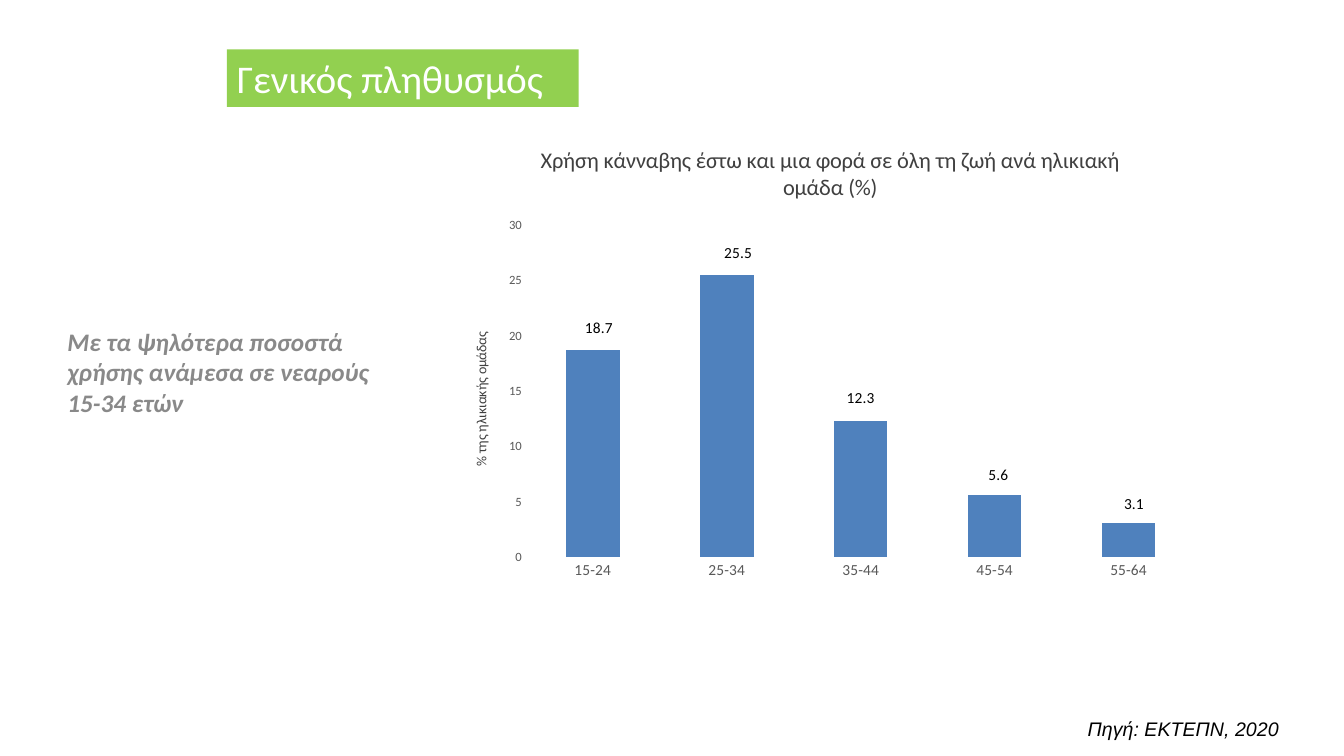
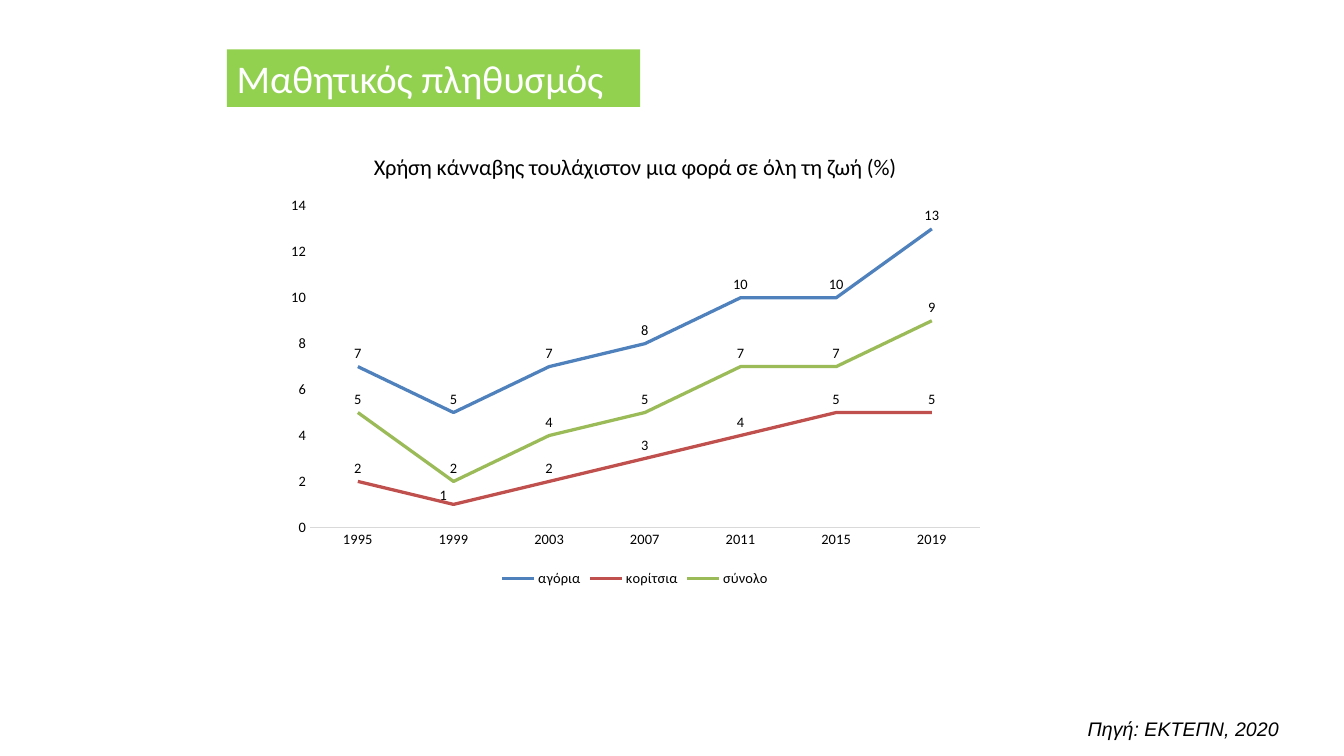
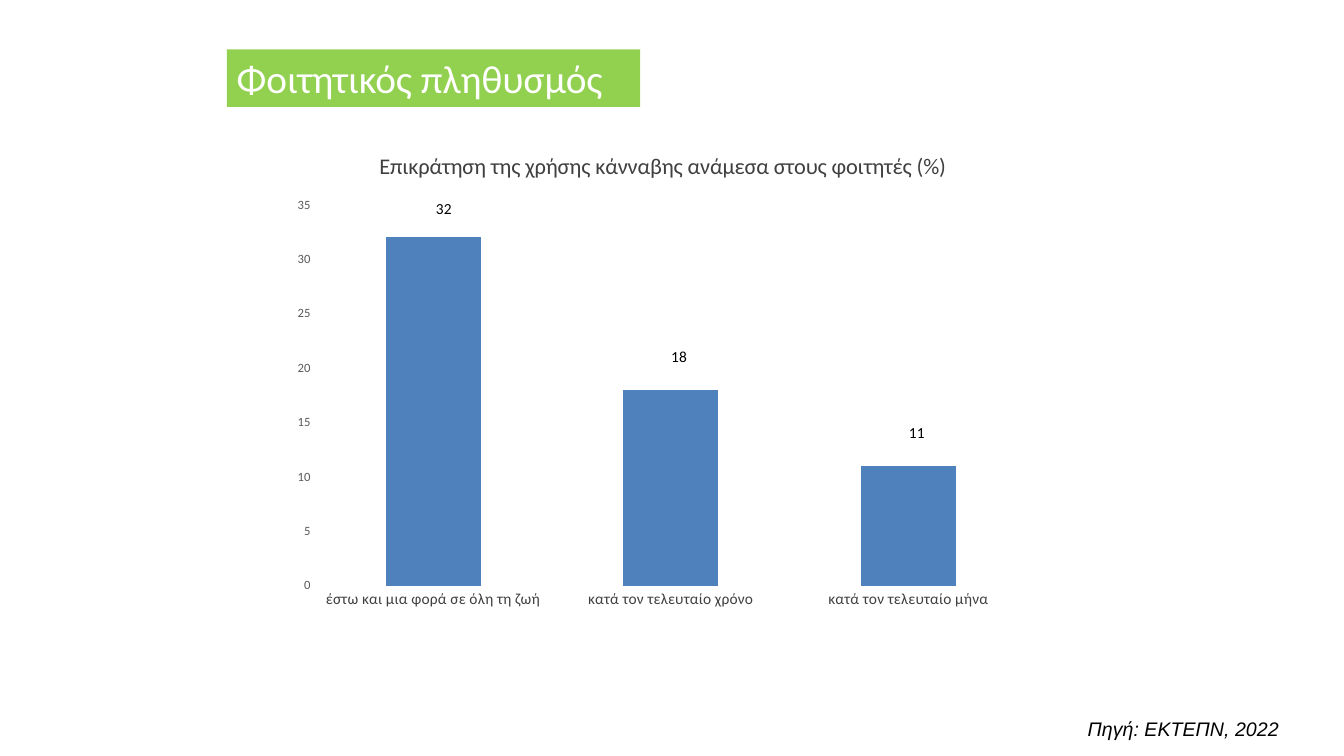
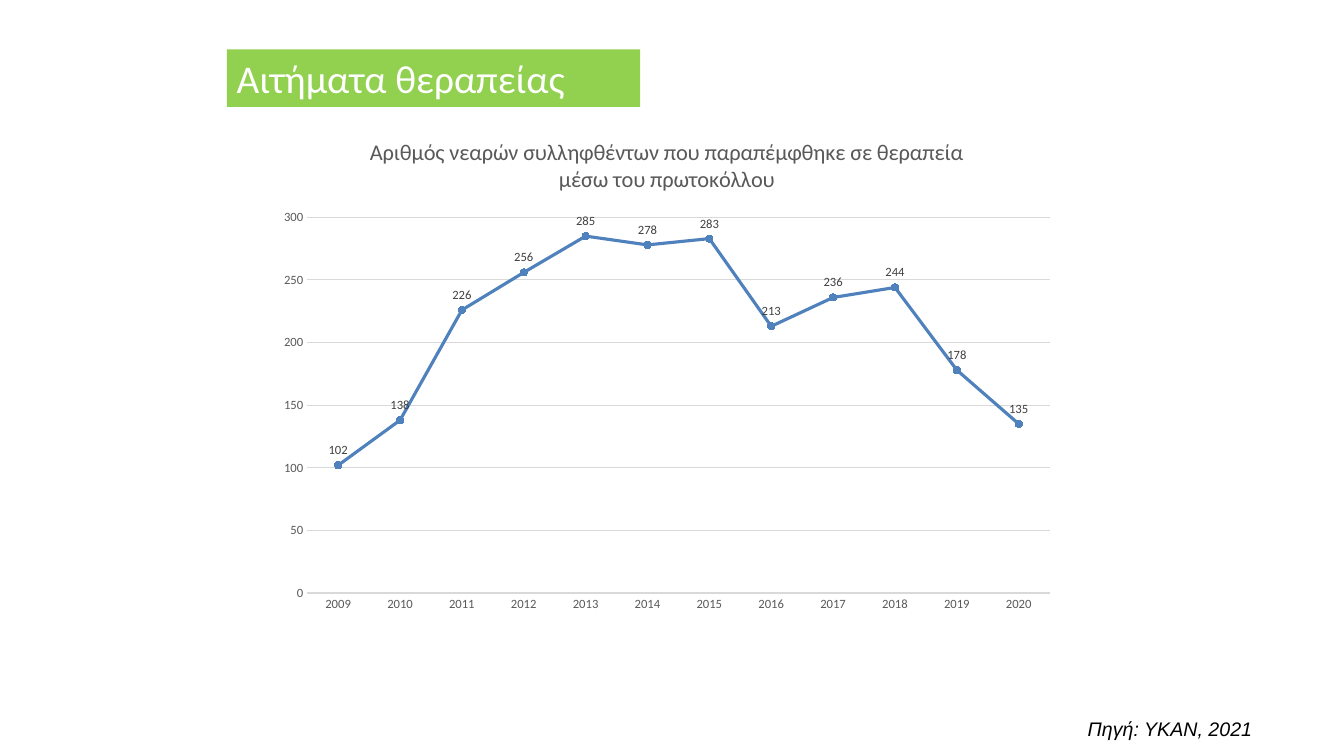
from lxml import etree
from pptx import Presentation
from pptx import util as u
from pptx.chart import data as cd
from pptx.dml import color
from pptx.enum import chart as ch, shapes, text
from pptx.oxml import ns

GREEN, WHITE, BLACK = "92D050", "FFFFFF", "000000"
BLUE, RED, LIME = "4F81BD", "C0504D", "9BBB59"
DARK, MID, GREY, PALE = "404040", "595959", "898989", "D9D9D9"
BAR, LINE, DOTS = (ch.XL_CHART_TYPE.COLUMN_CLUSTERED, ch.XL_CHART_TYPE.LINE,
                   ch.XL_CHART_TYPE.LINE_MARKERS)
OUT, UP = ch.XL_LABEL_POSITION.OUTSIDE_END, ch.XL_LABEL_POSITION.ABOVE

SLIDES = [
    dict(head="Γενικός πληθυσμός", wide=3.49, source="Πηγή: ΕΚΤΕΠΝ, 2020",
         note="Με τα ψηλότερα ποσοστά χρήσης ανάμεσα σε νεαρούς 15-34 ετών",
         kind=BAR, box=(4.46, 1.25, 7.55, 4.59), plot=(10, 21.5, 88, 71.7),
         title="Χρήση κάνναβης έστω και μια φορά σε όλη τη ζωή ανά ηλικιακή ομάδα (%)",
         tint=DARK, unit="% της ηλικιακής ομάδας", top=30, step=5,
         cats=["15-24", "25-34", "35-44", "45-54", "55-64"],
         rows=[("Series 1", BLUE, [18.7, 25.5, 12.3, 5.6, 3.1])],
         size=10, cat=(11, MID), val=(9, MID), label=(11, BLACK), place=OUT,
         shift={(0, 0): (.8, -1.9), (0, 1): (1.5, -1.8), (0, 2): (0, -2.1),
                (0, 3): (.5, -1.4), (0, 4): (.7, -1.1)}),
    dict(head="Μαθητικός πληθυσμός", wide=4.1, source="Πηγή: ΕΚΤΕΠΝ, 2020",
         kind=LINE, box=(2.74, 1.32, 7.12, 4.55), plot=(4.7, 15.9, 93.3, 70.1),
         title="Χρήση κάνναβης τουλάχιστον μια φορά σε όλη τη ζωή (%)",
         tint=BLACK, top=14, step=2,
         cats=["1995", "1999", "2003", "2007", "2011", "2015", "2019"],
         rows=[("αγόρια", BLUE, [7, 5, 7, 8, 10, 10, 13]),
               ("κορίτσια", RED, [2, 1, 2, 3, 4, 5, 5]),
               ("σύνολο", LIME, [5, 2, 4, 5, 7, 7, 9])],
         size=10.3, cat=(10.3, BLACK), val=(10.3, BLACK), label=(10.3, BLACK),
         place=UP, form="0", axis=PALE, shift={(1, 1): (-1.4, .9)}),
    dict(head="Φοιτητικός πληθυσμός", wide=4.1, source="Πηγή: ΕΚΤΕΠΝ, 2022",
         kind=BAR, box=(2.81, 1.31, 7.53, 4.82), plot=(4.1, 15, 93.9, 78.4),
         title="Επικράτηση της χρήσης κάνναβης ανάμεσα στους φοιτητές (%)",
         tint=DARK, top=35, step=5,
         cats=["έστω και μια φορά σε όλη τη ζωή", "κατά τον τελευταίο χρόνο",
               "κατά τον τελευταίο μήνα"],
         rows=[("Series 1", BLUE, [32, 18, 11])],
         size=10, cat=(11, DARK), val=(9, MID), label=(11, BLACK), place=OUT,
         shift={(0, 0): (1.4, -3), (0, 1): (1.1, -4), (0, 2): (1.1, -4)}),
    dict(head="Αιτήματα θεραπείας", wide=4.1, source="Πηγή: ΥΚΑΝ, 2021",
         kind=DOTS, box=(2.66, 1.16, 7.91, 5.01), plot=(4.9, 19.9, 93.1, 74.4),
         title="Αριθμός νεαρών συλληφθέντων που παραπέμφθηκε σε θεραπεία μέσω του πρωτοκόλλου",
         tint=MID, top=300, step=50, grid=PALE,
         cats=[str(y) for y in range(2009, 2021)],
         rows=[("Series 1", BLUE,
                [102, 138, 226, 256, 285, 278, 283, 213, 236, 244, 178, 135])],
         size=10, cat=(9, MID), val=(9, MID), label=(9, DARK), place=UP, axis=PALE),
]


def rgb(tone):
    return color.RGBColor.from_string(tone)


def style(font, size, tone, name="Calibri", **more):
    look = dict(size=u.Pt(size), name=name, bold=False, italic=False)
    for key, val in {**look, **more}.items():
        setattr(font, key, val)
    font.color.rgb = rgb(tone)


def stroke(line, tone, width=.75):
    if tone:
        line.color.rgb = rgb(tone)
        line.width = u.Pt(width)
    else:
        line.fill.background()


def write(frame, words, *look, **more):
    run = frame.paragraphs[0].add_run()
    run.text = words
    style(run.font, *look, **more)


def block(page, box, words, *look, fill=None, **more):
    part = page.shapes.add_shape(shapes.MSO_SHAPE.RECTANGLE, *map(u.Inches, box)) \
        if fill else page.shapes.add_textbox(*map(u.Inches, box))
    if fill:
        part.shadow.inherit = False
        part.fill.solid()
        part.fill.fore_color.rgb = rgb(fill)
        part.line.fill.background()
    frame = part.text_frame
    frame.word_wrap = True
    frame.auto_size = text.MSO_AUTO_SIZE.SHAPE_TO_FIT_TEXT
    frame.vertical_anchor = text.MSO_ANCHOR.TOP
    frame.paragraphs[0].alignment = text.PP_ALIGN.LEFT
    write(frame, words, *look, **more)


def layout(host, spot, modes, keys, shares):
    for old in host.findall(ns.qn("c:layout")):
        host.remove(old)
    node = etree.Element(ns.qn("c:layout"))
    man = etree.SubElement(node, ns.qn("c:manualLayout"))
    for tag, val in [*modes, *((k, v / 100) for k, v in zip(keys, shares))]:
        etree.SubElement(man, ns.qn("c:" + tag)).set("val", str(val))
    host.insert(spot, node)


def axes(chart, s):
    for axis, look in ((chart.category_axis, s["cat"]), (chart.value_axis, s["val"])):
        axis.major_tick_mark = axis.minor_tick_mark = ch.XL_TICK_MARK.NONE
        axis.has_major_gridlines = False
        style(axis.tick_labels.font, *look)
    stroke(chart.category_axis.format.line, s.get("axis"))
    val = chart.value_axis
    stroke(val.format.line, None)
    val.minimum_scale, val.maximum_scale, val.major_unit = 0, s["top"], s["step"]
    val.tick_labels.number_format = s.get("form", "General")
    val.tick_labels.number_format_is_linked = False
    if "grid" in s:
        val.has_major_gridlines = True
        stroke(val.major_gridlines.format.line, s["grid"])
    if "unit" in s:
        write(val.axis_title.text_frame, s["unit"], 10, DARK)


def paint(row, tone, s):
    if s["kind"] == BAR:
        row.format.fill.solid()
        row.format.fill.fore_color.rgb = rgb(tone)
    else:
        row.smooth = False
        stroke(row.format.line, tone, 2.32 if s["kind"] == LINE else 2.25)
    if s["kind"] == DOTS:
        mark = row.marker
        mark.style, mark.size = ch.XL_MARKER_STYLE.CIRCLE, 5
        mark.format.fill.solid()
        mark.format.fill.fore_color.rgb = rgb(tone)
        stroke(mark.format.line, tone)
    tags = row.data_labels
    tags.show_value, tags.position = True, s["place"]
    tags.number_format = s.get("form", "General")
    tags.number_format_is_linked = False
    style(tags.font, *s["label"])
    for lead in tags._element.findall(ns.qn("c:showLeaderLines")):
        lead.set("val", "0")


def graph(page, s):
    data = cd.CategoryChartData()
    data.categories = s["cats"]
    for name, _, vals in s["rows"]:
        data.add_series(name, vals)
    chart = page.shapes.add_chart(s["kind"], *map(u.Inches, s["box"]), data).chart
    style(chart.font, s["size"], BLACK)
    chart.has_title = True
    write(chart.chart_title.text_frame, s["title"], 16, s["tint"])
    chart.chart_title.include_in_layout = False
    chart.has_legend = len(s["rows"]) > 1
    if chart.has_legend:
        chart.legend.position = ch.XL_LEGEND_POSITION.BOTTOM
        chart.legend.include_in_layout = False
    axes(chart, s)
    plot = chart.plots[0]
    plot.vary_by_categories = False
    if s["kind"] == BAR:
        plot.gap_width = 150
    rows = list(plot.series)
    for row, (_, tone, _) in zip(rows, s["rows"]):
        paint(row, tone, s)
    for (i, j), move in s.get("shift", {}).items():
        tag = rows[i].points[j].data_label
        style(tag.font, *s["label"])
        tag.position = s["place"]
        for node in rows[i].data_labels._element.findall(ns.qn("c:dLbl")):
            if node.find(ns.qn("c:idx")).get("val") == str(j):
                layout(node, 1, [], "xy", move)
    area = chart._chartSpace.find(".//" + ns.qn("c:plotArea"))
    modes = [("layoutTarget", "inner"), ("xMode", "edge"), ("yMode", "edge")]
    layout(area, 0, modes, "xywh", s["plot"])


def main():
    deck = Presentation()
    deck.slide_width, deck.slide_height = u.Inches(13.33), u.Inches(7.5)
    for s in SLIDES:
        page = deck.slides.add_slide(deck.slide_layouts[6])
        block(page, (10.69, 7.06, 3.17, .34), s["source"], 14, BLACK, "Arial", italic=True)
        block(page, (2.25, .49, s["wide"], .57), s["head"], 28, WHITE, fill=GREEN)
        graph(page, s)
        if "note" in s:
            block(page, (.57, 3.19, 3.57, 1.01), s["note"], 18, GREY, bold=True, italic=True)
    deck.save("out.pptx")


if __name__ == "__main__":
    main()
